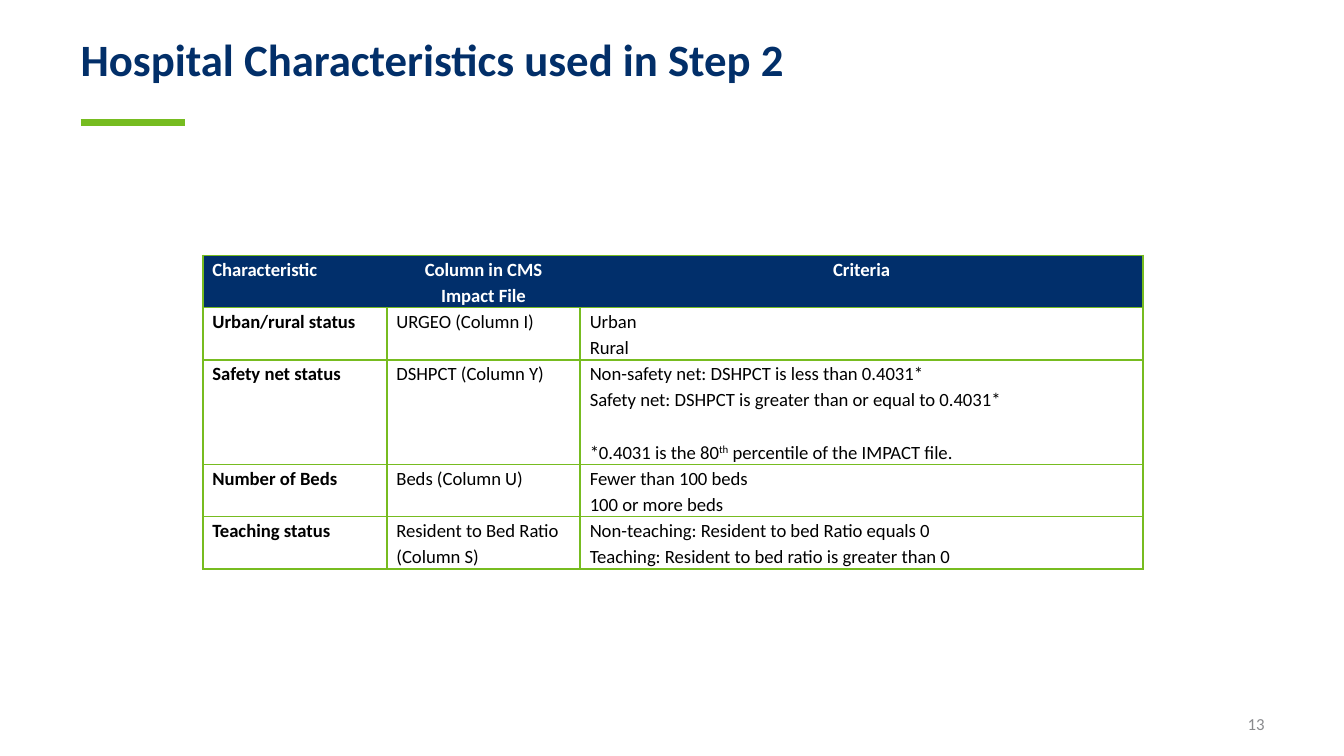
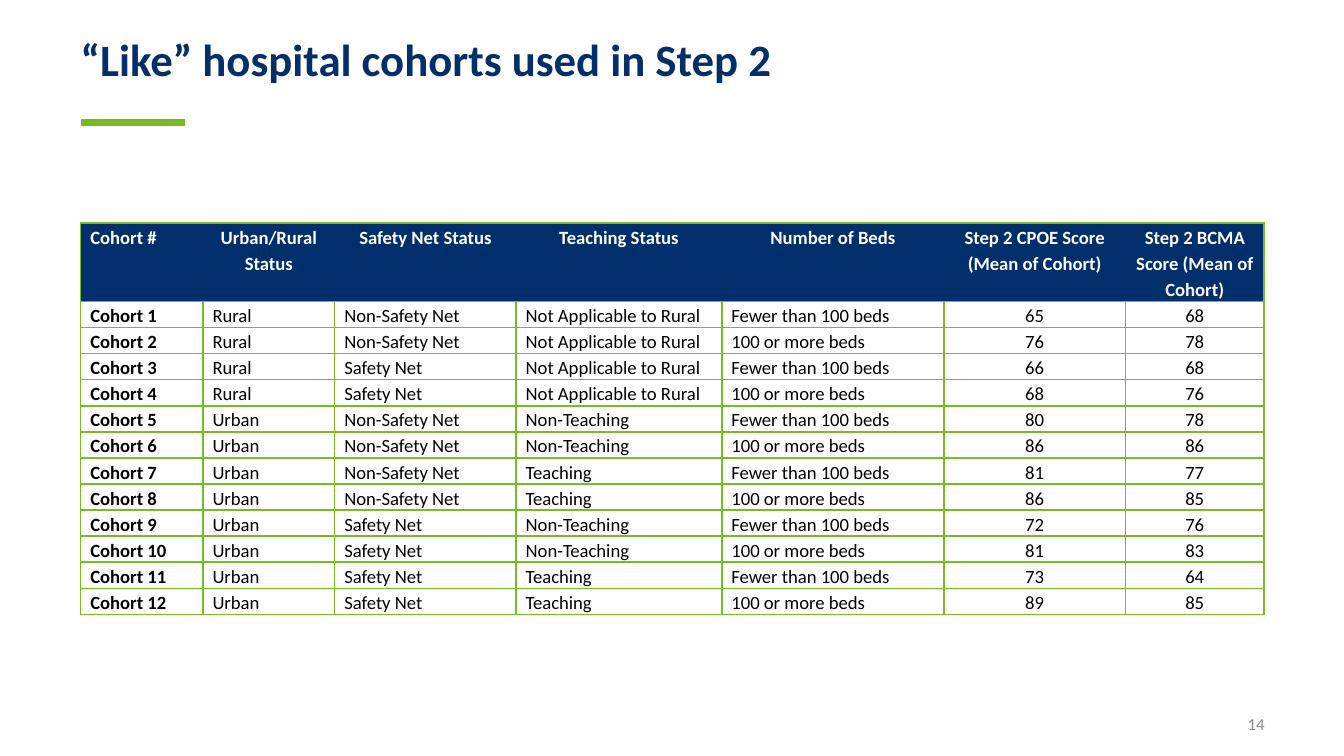
from dataclasses import dataclass
from itertools import product

from lxml.etree import SubElement
from pptx import Presentation
from pptx.dml.color import RGBColor
from pptx.enum.shapes import MSO_CONNECTOR
from pptx.enum.text import MSO_ANCHOR, MSO_AUTO_SIZE, PP_ALIGN
from pptx.oxml.ns import qn
from pptx.util import Pt


@dataclass(frozen=True)
class Theme:
    font: str = "Calibri"
    title: str = "022F69"
    header: str = "012F6B"
    accent: str = "76BC20"
    border: str = "77BC20"
    body: str = "000000"
    reverse: str = "FFFFFF"
    muted: str = "898A8D"
    title_size: int = 24
    table_size: int = 10
    number_size: int = 9
    left: float = 43.2
    width: float = 634.3


class Deck:
    def __init__(self, prs, theme):
        self.prs = prs
        self.theme = theme
        self.slide = None

    def add_slide(self, title, number):
        self.slide = self.prs.slides.add_slide(self.prs.slide_layouts[5])
        self.title(title)
        self.rule()
        self.number(number)

    def format(self, p, size, color, bold=False, align=PP_ALIGN.LEFT, spacing=1.0):
        p.alignment = align
        p.line_spacing = spacing
        for r in p.runs:
            r.font.name = self.theme.font
            r.font.size = Pt(size)
            r.font.bold = bold
            r.font.color.rgb = RGBColor.from_string(color)

    def frame(self, sp, text):
        tf = sp.text_frame
        tf.text = text
        tf.word_wrap = True
        tf.auto_size = MSO_AUTO_SIZE.SHAPE_TO_FIT_TEXT
        tf.vertical_anchor = MSO_ANCHOR.MIDDLE
        tf.margin_left = tf.margin_top = tf.margin_right = tf.margin_bottom = 0
        return tf.paragraphs[0]

    def title(self, text):
        t = self.theme
        sp = self.slide.shapes.title
        sp.left, sp.top, sp.width, sp.height = Pt(t.left), Pt(22.3), Pt(t.width), Pt(23.8)
        self.format(self.frame(sp, text), t.title_size, t.title, bold=True, spacing=0.8)

    def rule(self):
        t = self.theme
        line = self.slide.shapes.add_connector(
            MSO_CONNECTOR.STRAIGHT, Pt(t.left), Pt(65.6), Pt(t.left + 56), Pt(65.6))
        line.line.color.rgb = RGBColor.from_string(t.accent)
        line.line.width = Pt(3.5)
        SubElement(line._element.spPr, qn("a:effectLst"))

    def number(self, value):
        t = self.theme
        width = 24
        sp = self.slide.shapes.add_textbox(
            Pt(t.left + t.width - width), Pt(382.5), Pt(width), Pt(11))
        p = self.frame(sp, str(value))
        self.format(p, t.number_size, t.muted, align=PP_ALIGN.RIGHT)

    def borders(self, cell, hidden=()):
        tcPr = cell._tc.get_or_add_tcPr()
        for side in "LRTB":
            ln = SubElement(tcPr, qn(f"a:ln{side}"), w=str(Pt(1)))
            if side in hidden:
                SubElement(ln, qn("a:noFill"))
            else:
                fill = SubElement(ln, qn("a:solidFill"))
                SubElement(fill, qn("a:srgbClr"), val=self.theme.border)

    def cell_paragraph(self, p, color, bold=False, align=PP_ALIGN.LEFT):
        self.format(p, self.theme.table_size, color, bold, align, 1.15)

    def table(self, left, top, widths, heights, rows, centered=()):
        t = self.theme
        table = self.slide.shapes.add_table(
            len(rows), len(widths), Pt(left), Pt(top), Pt(sum(widths)), Pt(sum(heights))).table
        for col, width in zip(table.columns, widths):
            col.width = Pt(width)
        for row, height in zip(table.rows, heights):
            row.height = Pt(height)
        last = len(widths) - 1
        for i, texts in enumerate(rows):
            header = i == 0
            for j, text in enumerate(texts):
                cell = table.cell(i, j)
                cell.margin_left = cell.margin_right = Pt(5.2)
                cell.margin_top = cell.margin_bottom = 0
                hidden = ("L" if j > 0 else "") + ("R" if j < last else "")
                self.borders(cell, hidden if header else "")
                if header:
                    cell.fill.solid()
                    cell.fill.fore_color.rgb = RGBColor.from_string(t.header)
                else:
                    cell.fill.background()
                cell.text_frame.text = text
                center = (header and j > 0) or j in centered
                for p in cell.text_frame.paragraphs:
                    self.cell_paragraph(
                        p, t.reverse if header else t.body, header or j == 0,
                        PP_ALIGN.CENTER if center else PP_ALIGN.LEFT)
        return table

    def footnote(self, cell, before, raised, after):
        p = cell.text_frame.add_paragraph()
        p.space_before = Pt(14)
        for text in (before, raised, after):
            p.add_run().text = text
        self.cell_paragraph(p, self.theme.body)
        p.runs[1]._r.get_or_add_rPr().set("baseline", "30000")


CHARACTERISTICS = [
    ("Characteristic", "Column in CMS Impact File", "Criteria"),
    ("Urban/rural status", "URGEO (Column I)", "Urban\nRural"),
    ("Safety net status", "DSHPCT (Column Y)",
     "Non-safety net: DSHPCT is less than 0.4031*\n"
     "Safety net: DSHPCT is greater than or equal to 0.4031*"),
    ("Number of Beds", "Beds (Column U)", "Fewer than 100 beds\n100 or more beds"),
    ("Teaching status", "Resident to Bed Ratio (Column S)",
     "Non-teaching: Resident to bed Ratio equals 0\n"
     "Teaching: Resident to bed ratio is greater than 0"),
]

COHORT_HEADER = (
    "Cohort #", "Urban/Rural Status", "Safety Net Status", "Teaching Status",
    "Number of Beds", "Step 2 CPOE Score (Mean of Cohort)",
    "Step 2 BCMA Score (Mean of Cohort)")
SAFETY = ("Non-Safety Net", "Safety Net")
BEDS = ("Fewer than 100 beds", "100 or more beds")
TEACHING = {
    "Rural": ("Not Applicable to Rural",),
    "Urban": ("Non-Teaching", "Teaching"),
}
SCORES = [
    (65, 68), (76, 78), (66, 68), (68, 76), (80, 78), (86, 86),
    (81, 77), (86, 85), (72, 76), (81, 83), (73, 64), (89, 85),
]


def cohort_rows():
    groups = [(area, *group) for area, teaching in TEACHING.items()
              for group in product(SAFETY, teaching, BEDS)]
    return [COHORT_HEADER] + [
        (f"Cohort {n}", *group, str(cpoe), str(bcma))
        for n, (group, (cpoe, bcma)) in enumerate(zip(groups, SCORES), 1)]


def main():
    prs = Presentation()
    prs.slide_width, prs.slide_height = Pt(720), Pt(405)
    s = Deck(prs, Theme())

    s.add_slide("Hospital Characteristics used in Step 2", 13)
    table = s.table(108.6, 136.8, (98.6, 103.6, 301.6), (28, 28, 56, 28, 28), CHARACTERISTICS)
    s.footnote(table.cell(2, 2), "*0.4031 is the 80", "th", " percentile of the IMPACT file.")

    s.add_slide("“Like” hospital cohorts used in Step 2", 14)
    s.table(s.theme.left, 119.5, (65.5, 70.6, 97.2, 110.2, 119, 97.2, 74.4),
            [42] + [14] * len(SCORES), cohort_rows(), centered=(5, 6))

    prs.save("out.pptx")


if __name__ == "__main__":
    main()
